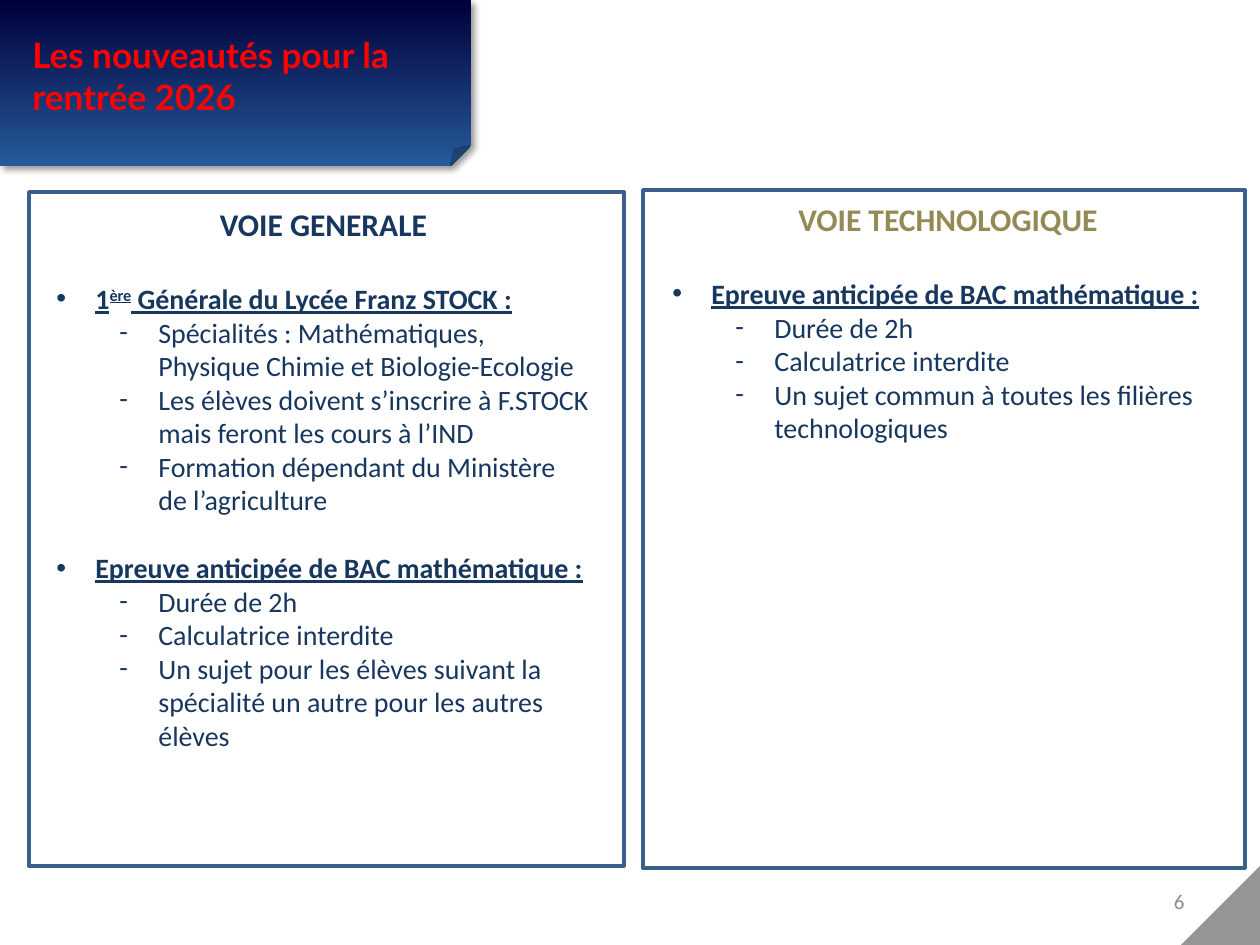
from lxml import etree
from pptx import Presentation
from pptx.dml.color import RGBColor
from pptx.enum.shapes import MSO_SHAPE
from pptx.enum.text import MSO_ANCHOR, PP_ALIGN
from pptx.oxml.ns import qn
from pptx.util import Emu, Pt

RECTANGLE = MSO_SHAPE.RECTANGLE
FOLDED_CORNER = MSO_SHAPE.FOLDED_CORNER
RIGHT_TRIANGLE = MSO_SHAPE.RIGHT_TRIANGLE
TOP, MIDDLE = MSO_ANCHOR.TOP, MSO_ANCHOR.MIDDLE
LEFT, CENTER, RIGHT = PP_ALIGN.LEFT, PP_ALIGN.CENTER, PP_ALIGN.RIGHT

EMU_PER_PX = 914400 / 126
HANGING = 39
NAVY = "17375E"
OLIVE = "948A54"
BORDER = "3A5F8C"

EXAM = "Epreuve anticipée de BAC mathématique :"
EXAM_RULES = ["Durée de 2h", "Calculatrice interdite"]
GENERAL_TOPICS = [
    (("1", "ère", " Générale du Lycée Franz STOCK :"), [
        "Spécialités : Mathématiques, Physique Chimie et Biologie-Ecologie",
        "Les élèves doivent s’inscrire à F.STOCK mais feront les cours à l’IND",
        "Formation dépendant du Ministère de l’agriculture",
    ]),
    ((EXAM,), EXAM_RULES + [
        "Un sujet pour les élèves suivant la spécialité un autre pour les autres élèves",
    ]),
]
TECHNOLOGY_TOPICS = [
    ((EXAM,), EXAM_RULES + ["Un sujet commun à toutes les filières technologiques"]),
]


def px(length):
    return Emu(round(length * EMU_PER_PX))


def rgb(color):
    return RGBColor.from_string(color)


def add_plain_shape(slide, preset, box):
    shape = slide.shapes.add_shape(preset, *map(px, box))
    shape.shadow.inherit = False
    shape.line.fill.background()
    return shape


def add_frame(slide, box):
    frame = add_plain_shape(slide, RECTANGLE, box)
    frame.fill.background()
    frame.line.color.rgb = rgb(BORDER)
    frame.line.width = Pt(2)


def add_banner(slide, box):
    banner = add_plain_shape(slide, FOLDED_CORNER, box)
    properties = banner._element.spPr
    fold = properties.find(qn("a:prstGeom")).find(qn("a:avLst"))
    etree.SubElement(fold, qn("a:gd"), name="adj", fmla="val 12500")
    banner.fill.gradient()
    banner.fill.gradient_angle = 270
    for stop, position, color in zip(banner.fill.gradient_stops, (0, 1), ("00003A", "265A9A")):
        stop.position = position
        stop.color.rgb = rgb(color)
    effects = properties.find(qn("a:effectLst"))
    shadow = etree.SubElement(effects, qn("a:outerShdw"), blurRad=str(Pt(4)),
                              dist=str(Pt(3)), dir="2700000", algn="tl", rotWithShape="0")
    shade = etree.SubElement(shadow, qn("a:srgbClr"), val="000000")
    etree.SubElement(shade, qn("a:alpha"), val="40000")


def add_corner(slide, box):
    corner = add_plain_shape(slide, RIGHT_TRIANGLE, box)
    corner.rotation = 270
    corner.fill.solid()
    corner.fill.fore_color.rgb = rgb("969696")


def format_run(run, size, color, bold=False, underline=False, font="Calibri"):
    run.font.name = font
    run.font.size = Pt(size)
    run.font.bold = bold
    run.font.underline = underline
    run.font.color.rgb = rgb(color)


def add_text(slide, box, text, size, color, align=LEFT, anchor=TOP, **style):
    frame = slide.shapes.add_textbox(*map(px, box)).text_frame
    frame.word_wrap = True
    frame.vertical_anchor = anchor
    frame.text = text
    heading = frame.paragraphs[0]
    heading.alignment = align
    format_run(heading.runs[0], size, color, **style)
    return frame


def add_bullet(frame, segments, symbol, level, space_before=0, **style):
    paragraph = frame.add_paragraph()
    paragraph.level = level
    paragraph.space_before = Pt(space_before)
    properties = paragraph._p.get_or_add_pPr()
    properties.set("marL", str(px(HANGING + 63 * level)))
    properties.set("indent", str(px(-HANGING)))
    etree.SubElement(properties, qn("a:buFont"), typeface="Arial" if level == 0 else "Calibri")
    etree.SubElement(properties, qn("a:buChar"), char=symbol)
    for index, segment in enumerate(segments):
        run = paragraph.add_run()
        run.text = segment
        format_run(run, 16, NAVY, **style)
        if index % 2:
            run._r.get_or_add_rPr().set("baseline", "30000")


def add_track(slide, frame_box, text_box, title, title_color, topics):
    add_frame(slide, frame_box)
    frame = add_text(slide, text_box, title, 18, title_color, CENTER, bold=True)
    for index, (heading, details) in enumerate(topics):
        gap = 19.5 if index else 22
        add_bullet(frame, heading, "•", 0, gap, bold=True, underline=True)
        for detail in details:
            add_bullet(frame, (detail,), "-", 1)


def main():
    deck = Presentation()
    deck.slide_width, deck.slide_height = px(1260), px(945)
    slide = deck.slides.add_slide(deck.slide_layouts[6])
    add_text(slide, (903, 876, 294, 50), "6", 12, "8C8C8C", RIGHT, MIDDLE)
    add_banner(slide, (0, 0, 471, 166))
    add_track(slide, (29, 192, 595, 674), (44, 199, 559, 564),
              "VOIE GENERALE", NAVY, GENERAL_TOPICS)
    add_track(slide, (643, 190, 602, 678), (660, 194, 576, 258),
              "VOIE TECHNOLOGIQUE", OLIVE, TECHNOLOGY_TOPICS)
    add_text(slide, (20, 27, 441, 97), "Les nouveautés pour la rentrée 2026",
             20, "FF0000", bold=True, font="Lato")
    add_corner(slide, (1181, 866, 79, 79))
    deck.save("out.pptx")


if __name__ == "__main__":
    main()
